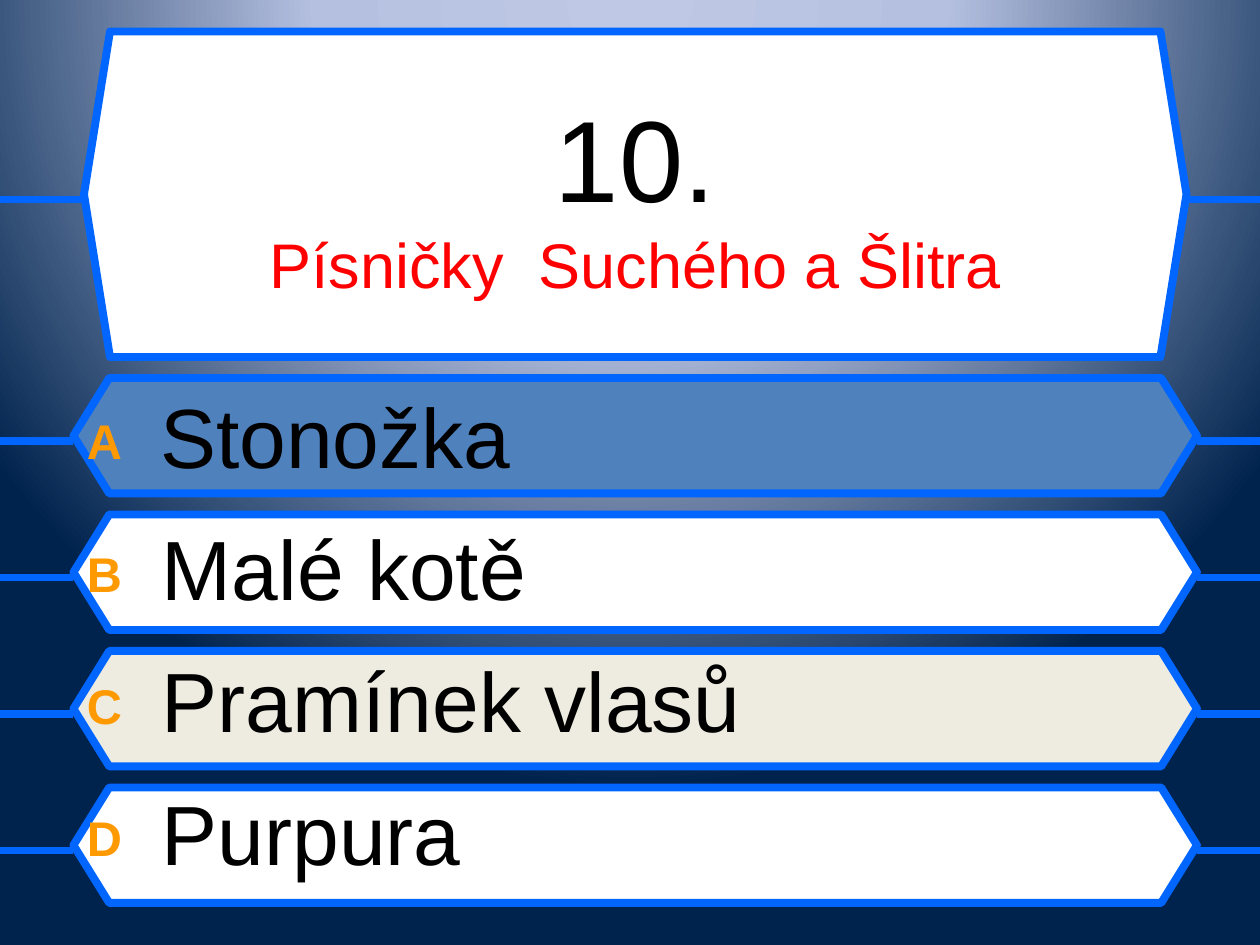
from lxml.etree import SubElement
from pptx import Presentation
from pptx.dml.color import RGBColor
from pptx.enum.shapes import MSO_CONNECTOR, MSO_SHAPE
from pptx.enum.text import MSO_ANCHOR, PP_ALIGN
from pptx.oxml import parse_xml
from pptx.oxml.ns import nsdecls, qn
from pptx.util import Pt

NUMBER = "10."
QUESTION = "Písničky  Suchého a Šlitra"
ANSWERS = [
    ("A", "Stonožka", "blue"),
    ("B", "Malé kotě", "white"),
    ("C", "Pramínek vlasů", "cream"),
    ("D", "Purpura", "white"),
]
COLORS = {
    "blue": "4F81BD",
    "white": "FFFFFF",
    "cream": "EEECE1",
    "outline": "0066FF",
    "letter": "FF9900",
    "text": "000000",
    "question": "FF0000",
}
BACKGROUND = [(0, "BFC9E5"), (40, "B5C0E0"), (100, "00234D")]
SCALE = 7620
PAGE_WIDTH, PAGE_HEIGHT = 1200, 900
ANSWER_LEFT, ANSWER_TOP, ANSWER_WIDTH, ANSWER_HEIGHT = 70, 360, 1070, 110
ANSWER_STEP = 130
INDENT = 45


def px(*values):
    return [value * SCALE for value in values]


def rgb(name):
    return RGBColor.from_string(COLORS[name])


def style_line(line):
    line.color.rgb = rgb("outline")
    line.width = Pt(4.5)


def paint_background(page):
    stops = "".join(
        f'<a:gs pos="{position * 1000}"><a:srgbClr val="{color}"/></a:gs>'
        for position, color in BACKGROUND
    )
    fill = page.background.fill
    fill.gradient()
    properties = page.element.find(".//" + qn("p:bgPr"))
    gradient = parse_xml(
        f'<a:gradFill {nsdecls("a")} rotWithShape="1"><a:gsLst>{stops}</a:gsLst>'
        '<a:path path="circle"><a:fillToRect l="50000" t="-80000" r="50000" b="180000"/>'
        "</a:path></a:gradFill>"
    )
    properties.replace(properties.find(qn("a:gradFill")), gradient)


def add_connector(page, start, end, y):
    connector = page.shapes.add_connector(MSO_CONNECTOR.STRAIGHT, *px(start, y, end, y))
    style_line(connector.line)
    SubElement(connector.element.spPr, qn("a:effectLst"))


def add_panel(page, left, top, width, height, point, color, line_y):
    panel = page.shapes.add_shape(MSO_SHAPE.HEXAGON, *px(left, top, width, height))
    panel.adjustments[0] = point
    panel.adjustments[1] = 1.155
    panel.fill.solid()
    panel.fill.fore_color.rgb = rgb(color)
    style_line(panel.line)
    panel.shadow.inherit = False
    add_connector(page, left, 0, line_y)
    add_connector(page, PAGE_WIDTH, left + width, line_y)


def add_text_frame(page, left, top, width, height, anchor):
    frame = page.shapes.add_textbox(*px(left, top, width, height)).text_frame
    frame.word_wrap = True
    frame.vertical_anchor = anchor
    return frame


def style_span(span, size, color, bold=False):
    span.font.name = "Arial"
    span.font.size = Pt(size)
    span.font.bold = bold
    span.font.color.rgb = rgb(color)


def add_span(para, text, size, color, bold=False):
    span = para.add_run()
    span.text = text
    style_span(span, size, color, bold)
    return span


def add_title(page):
    frame = add_text_frame(page, 100, 50, 1010, 270, MSO_ANCHOR.MIDDLE)
    para = frame.paragraphs[0]
    para.alignment = PP_ALIGN.CENTER
    para.text = f"{NUMBER}\v{QUESTION}"
    number, question = para.runs
    style_span(number, 66, "text")
    style_span(question, 36, "question")


def add_answer_text(page):
    frame = add_text_frame(page, 71, 350, 1096, 520, MSO_ANCHOR.TOP)
    frame.text = "\n".join("" for _ in ANSWERS)
    for para, (letter, answer, _) in zip(frame.paragraphs, ANSWERS):
        properties = para._p.get_or_add_pPr()
        properties.set("marL", str(INDENT * SCALE))
        properties.set("indent", str(-INDENT * SCALE))
        spacing = SubElement(properties, qn("a:spcBef"))
        SubElement(spacing, qn("a:spcPct"), val="20000")
        label = add_span(para, f"{letter} ", 48, "letter", True)
        label.font._element.set("baseline", "10000")
        add_span(para, " ", 54, "text")
        add_span(para, answer, 48, "text")


def main():
    deck = Presentation()
    deck.slide_width, deck.slide_height = px(PAGE_WIDTH, PAGE_HEIGHT)
    page = deck.slides.add_slide(deck.slide_layouts[6])
    paint_background(page)
    for index, (_, _, color) in enumerate(ANSWERS):
        top = ANSWER_TOP + index * ANSWER_STEP
        add_panel(page, ANSWER_LEFT, top, ANSWER_WIDTH, ANSWER_HEIGHT, 0.31, color, top + 60)
    add_panel(page, 80, 30, 1050, 310, 0.08, "white", 190)
    add_title(page)
    add_answer_text(page)
    deck.save("out.pptx")


if __name__ == "__main__":
    main()
